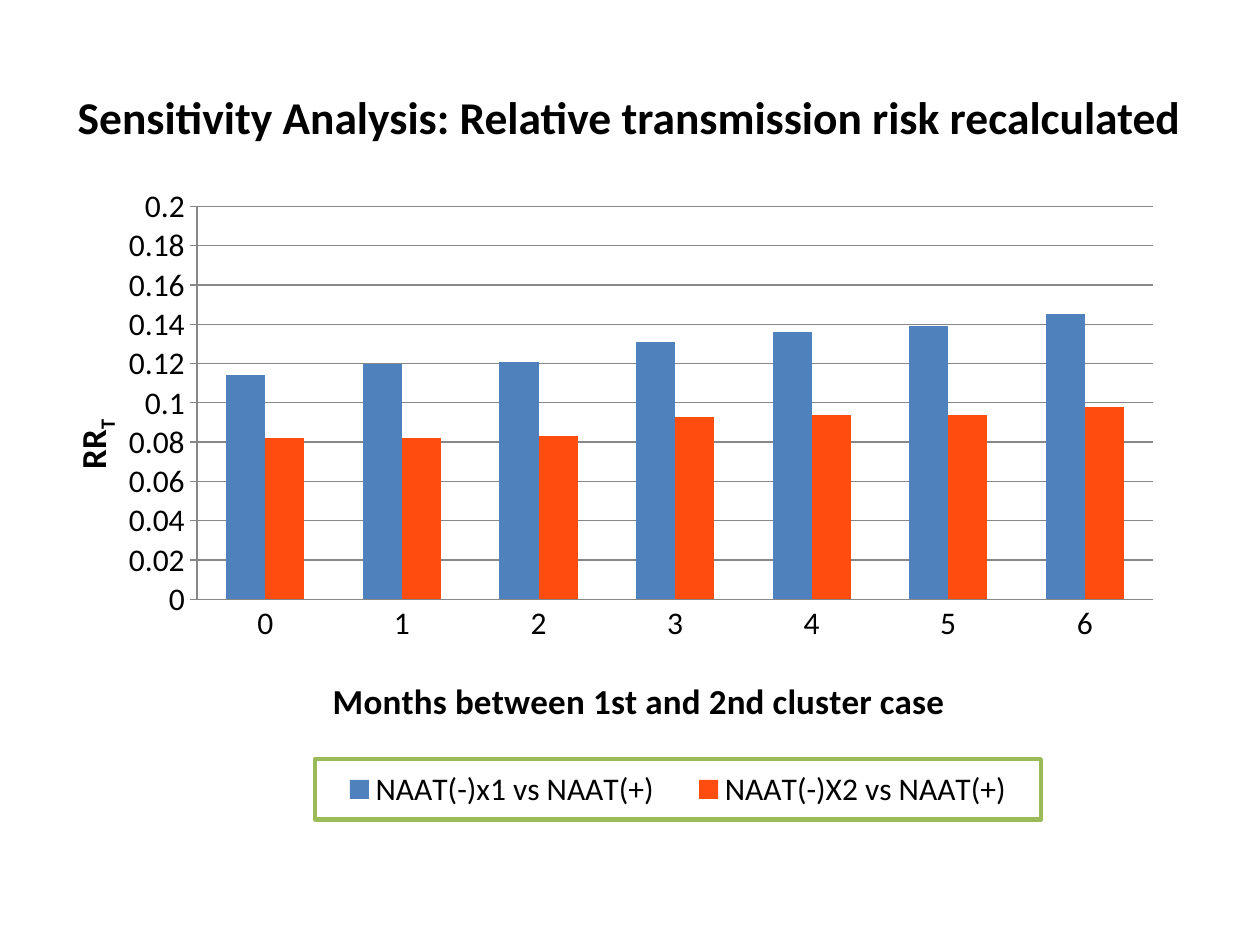
from dataclasses import dataclass

from lxml import etree
from pptx import Presentation
from pptx import util as u
from pptx.chart import data as chart_data
from pptx.dml.color import RGBColor
from pptx.enum import chart as ch, text
from pptx.oxml.ns import qn


@dataclass(frozen=True)
class Theme:
    font: str = "Calibri"
    ink: str = "000000"
    grid: str = "878787"
    single: str = "4F81BD"
    double: str = "FF4D10"
    frame: str = "9BBB59"
    heading: int = 26
    axis_heading: int = 20
    body: int = 18


THEME = Theme()
MONTHS = ["0", "1", "2", "3", "4", "5", "6"]
RISKS = [
    ("NAAT(-)x1 vs NAAT(+)", THEME.single,
     (0.114, 0.12, 0.121, 0.131, 0.136, 0.139, 0.145)),
    ("NAAT(-)X2 vs NAAT(+)", THEME.double,
     (0.082, 0.082, 0.083, 0.093, 0.094, 0.094, 0.098)),
]


def style_font(font, size, bold=False):
    font.name, font.size, font.bold = THEME.font, u.Pt(size), bold
    font.color.rgb = RGBColor.from_string(THEME.ink)


def style_line(line, color, width):
    line.color.rgb = RGBColor.from_string(color)
    line.width = u.Pt(width)


def set_layout(part, index, inner=False, **fractions):
    """Place a chart part by fractions of the chart's box."""
    for old in part.findall(qn("c:layout")):
        part.remove(old)
    layout = etree.Element(qn("c:layout"))
    manual = etree.SubElement(layout, qn("c:manualLayout"))
    settings = {"layoutTarget": "inner"} if inner else {}
    settings.update(xMode="edge", yMode="edge", **fractions)
    for tag, value in settings.items():
        etree.SubElement(manual, qn(f"c:{tag}")).set("val", str(value))
    part.insert(index, layout)


def add_heading(slide, left, top, width, height):
    heading = slide.shapes.title
    heading.left, heading.top, heading.width, heading.height = map(
        u.Pt, (left, top, width, height))
    frame = heading.text_frame
    frame.word_wrap = True
    frame.vertical_anchor = text.MSO_ANCHOR.MIDDLE
    line = frame.paragraphs[0]
    line.alignment = text.PP_ALIGN.CENTER
    run = line.add_run()
    run.text = "Sensitivity Analysis: Relative transmission risk recalculated"
    style_font(run.font, THEME.heading, True)


def title_axis(axis, words, x, y):
    """Write an axis title run by run; each word is (text, baseline)."""
    title = axis.axis_title
    line = title.text_frame.paragraphs[0]
    for wording, baseline in words:
        run = line.add_run()
        run.text = wording
        style_font(run.font, THEME.axis_heading, True)
        if baseline:
            run.font._element.set("baseline", str(baseline))
    set_layout(title._element, 1, x=x, y=y)
    return title


def format_axes(chart):
    months, risk = chart.category_axis, chart.value_axis
    for axis in (months, risk):
        style_font(axis.tick_labels.font, THEME.body)
        style_line(axis.format.line, THEME.grid, 0.75)
        axis.minor_tick_mark = ch.XL_TICK_MARK.NONE
    months.major_tick_mark = ch.XL_TICK_MARK.NONE
    title_axis(months, [("Months between 1st and 2nd cluster case", 0)],
               0.24, 0.74)

    risk.major_tick_mark = ch.XL_TICK_MARK.OUTSIDE
    risk.minimum_scale, risk.maximum_scale, risk.major_unit = 0, 0.2, 0.02
    risk.tick_labels.number_format = "General"
    risk.tick_labels.number_format_is_linked = False
    risk.has_major_gridlines = True
    style_line(risk.major_gridlines.format.line, THEME.grid, 0.75)
    title = title_axis(risk, [("RR", 0), ("T", -25000)], 0.01, 0.36)
    body = title.text_frame._txBody.find(qn("a:bodyPr"))
    body.set("rot", "-5400000")
    body.set("vert", "horz")


def format_legend(chart):
    chart.has_legend = True
    legend = chart.legend
    legend.position = ch.XL_LEGEND_POSITION.RIGHT
    legend.include_in_layout = False
    style_font(legend.font, THEME.body)
    set_layout(legend._element, 1, x=0.23, y=0.874, w=0.64, h=0.09)
    # Green frame
    props = etree.Element(qn("c:spPr"))
    line = etree.SubElement(props, qn("a:ln"), w=str(u.Pt(2.5)))
    fill = etree.SubElement(line, qn("a:solidFill"))
    etree.SubElement(fill, qn("a:srgbClr"), val=THEME.frame)
    legend._element.find(qn("c:txPr")).addprevious(props)


def add_risk_chart(slide, left, top, width, height):
    risks = chart_data.CategoryChartData()
    risks.categories = MONTHS
    for name, _, values in RISKS:
        risks.add_series(name, values)
    chart = slide.shapes.add_chart(
        ch.XL_CHART_TYPE.COLUMN_CLUSTERED,
        *map(u.Pt, (left, top, width, height)), risks).chart
    chart.has_title = False
    style_font(chart.font, THEME.body)

    # Columns
    columns = chart.plots[0]
    columns.gap_width, columns.overlap = 150, 0
    columns.vary_by_categories = False
    for series, (_, color, _) in zip(columns.series, RISKS):
        series.format.fill.solid()
        series.format.fill.fore_color.rgb = RGBColor.from_string(color)

    format_axes(chart)
    format_legend(chart)
    plot_area = chart._chartSpace.find(".//" + qn("c:plotArea"))
    set_layout(plot_area, 0, inner=True, x=0.126, y=0.047, w=0.843, h=0.588)


def main():
    deck = Presentation()
    deck.slide_width, deck.slide_height = u.Pt(720), u.Pt(540)
    slide = deck.slides.add_slide(deck.slide_layouts[5])  # title only
    add_risk_chart(slide, 31, 100, 648, 382)
    add_heading(slide, 36, 21.6, 648, 90)
    deck.save("out.pptx")


if __name__ == "__main__":
    main()
